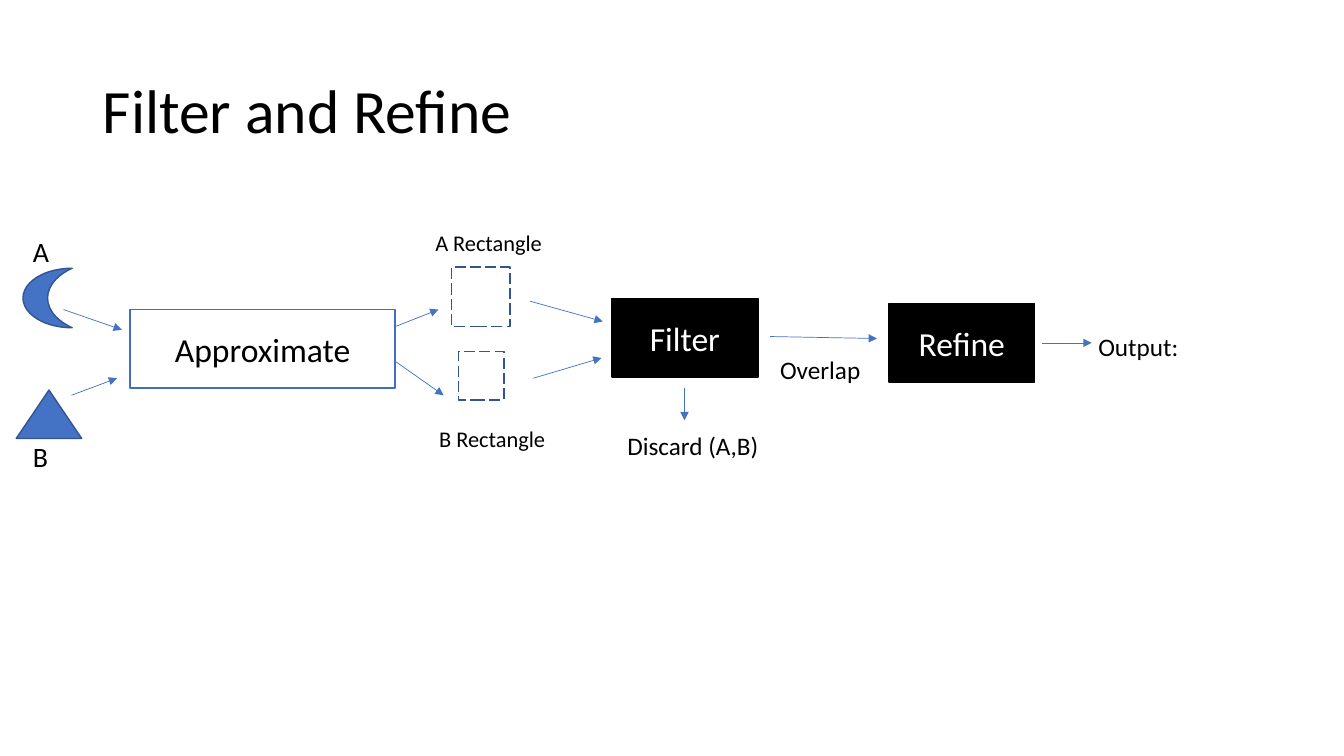
from lxml import etree
from pptx import Presentation
from pptx.dml.color import RGBColor
from pptx.enum import dml, shapes, text
from pptx.oxml import ns
from pptx.util import Cm, Pt

BLACK = RGBColor(0x00, 0x00, 0x00)
WHITE = RGBColor(0xFF, 0xFF, 0xFF)
BLUE = RGBColor(0x44, 0x72, 0xC4)
BOX_BLUE = RGBColor(0x3F, 0x6F, 0xC3)
DARK_BLUE = RGBColor(0x32, 0x54, 0x91)
FONT = "Calibri"
STAGE_HEIGHT = 1.98

# words, left, top, width, height, text size
LABELS = [
    ("A", 0.58, 5.79, 2.36, 1.12, 20),
    ("B", 0.58, 10.95, 2.36, 1.12, 20),
    ("A Rectangle", 10.72, 5.64, 4.17, 0.94, 16),
    ("B Rectangle", 10.82, 10.59, 4.17, 0.94, 16),
    ("Discard (A,B)", 15.56, 10.72, 4.78, 1.02, 18),
    ("Overlap", 19.41, 8.81, 4.78, 1.02, 18),
    ("Output:", 27.43, 8.23, 5.99, 1.02, 18),
]

# start x, start y, end x, end y
ARROWS = [
    (1.6, 7.8, 3.07, 8.31),  # A to Approximate
    (1.8, 9.96, 2.95, 9.53),  # B to Approximate
    (9.96, 8.23, 11.05, 7.8),  # Approximate to A Rectangle
    (9.98, 9.12, 11.18, 9.96),  # Approximate to B Rectangle
    (13.36, 7.59, 15.19, 8.1),  # A Rectangle to Filter
    (13.44, 9.53, 15.16, 9.02),  # B Rectangle to Filter
    (17.25, 9.78, 17.25, 10.59),  # Filter to Discard
    (19.41, 8.48, 22.1, 8.53),  # Filter to Refine
    (26.26, 8.64, 27.51, 8.64),  # Refine to Output
]


def write(frame, words, *, size, color=BLACK, align=text.PP_ALIGN.LEFT,
          anchor=text.MSO_ANCHOR.TOP, spacing=1.0):
    frame.word_wrap = True
    frame.vertical_anchor = anchor
    paragraph = frame.paragraphs[0]
    paragraph.alignment = align
    paragraph.line_spacing = spacing
    run = paragraph.add_run()
    run.text = words
    run.font.name = FONT
    run.font.size = Pt(size)
    run.font.color.rgb = color


def add_label(slide, words, left, top, width, height, size, **text_format):
    label = slide.shapes.add_textbox(Cm(left), Cm(top), Cm(width), Cm(height))
    write(label.text_frame, words, size=size, **text_format)


def add_figure(slide, preset, left, top, width, height, *, fill=None,
               outline=DARK_BLUE, dash=None):
    figure = slide.shapes.add_shape(preset, Cm(left), Cm(top), Cm(width), Cm(height))
    figure.shadow.inherit = False
    if fill is None:
        figure.fill.background()
    else:
        figure.fill.solid()
        figure.fill.fore_color.rgb = fill
    figure.line.color.rgb = outline
    figure.line.width = Pt(1)
    if dash is not None:
        figure.line.dash_style = dash
    return figure


def add_stage(slide, words, left, top, width, *, fill, outline, color):
    """Add a processing step: a box with its name in the middle."""
    stage = add_figure(slide, shapes.MSO_SHAPE.RECTANGLE, left, top, width,
                       STAGE_HEIGHT, fill=fill, outline=outline)
    write(stage.text_frame, words, size=24, color=color,
          align=text.PP_ALIGN.CENTER, anchor=text.MSO_ANCHOR.MIDDLE)


def add_arrow(slide, start_x, start_y, end_x, end_y):
    arrow = slide.shapes.add_connector(
        shapes.MSO_CONNECTOR.STRAIGHT, Cm(start_x), Cm(start_y), Cm(end_x), Cm(end_y))
    arrow.line.color.rgb = BLUE
    arrow.line.width = Pt(0.5)
    properties = arrow.element.spPr
    etree.SubElement(properties.find(ns.qn("a:ln")), ns.qn("a:tailEnd"), type="triangle")
    etree.SubElement(properties, ns.qn("a:effectLst"))


def main():
    deck = Presentation()
    deck.slide_width, deck.slide_height = Cm(33.87), Cm(19.05)
    slide = deck.slides.add_slide(deck.slide_layouts[6])

    add_label(slide, "Filter and Refine", 2.34, 1.02, 29.21, 3.68, 44,
              anchor=text.MSO_ANCHOR.MIDDLE, spacing=0.9)

    preset = shapes.MSO_SHAPE
    add_figure(slide, preset.MOON, 0.58, 6.76, 1.24, 1.5, fill=BLUE)
    add_figure(slide, preset.ISOSCELES_TRIANGLE, 0.41, 9.83, 1.65, 1.22, fill=BLUE)
    for bounds in ((11.38, 6.73, 1.47, 1.5), (11.56, 8.86, 1.14, 1.22)):
        add_figure(slide, preset.RECTANGLE, *bounds, dash=dml.MSO_LINE.LONG_DASH)

    add_stage(slide, "Approximate", 3.28, 7.8, 6.68,
              fill=None, outline=BOX_BLUE, color=BLACK)
    for words, left, top in (("Filter", 15.42, 7.52), ("Refine", 22.4, 7.65)):
        add_stage(slide, words, left, top, 3.68,
                  fill=BLACK, outline=BLACK, color=WHITE)

    for arrow in ARROWS:
        add_arrow(slide, *arrow)
    for label in LABELS:
        add_label(slide, *label)

    deck.save("out.pptx")


if __name__ == "__main__":
    main()
